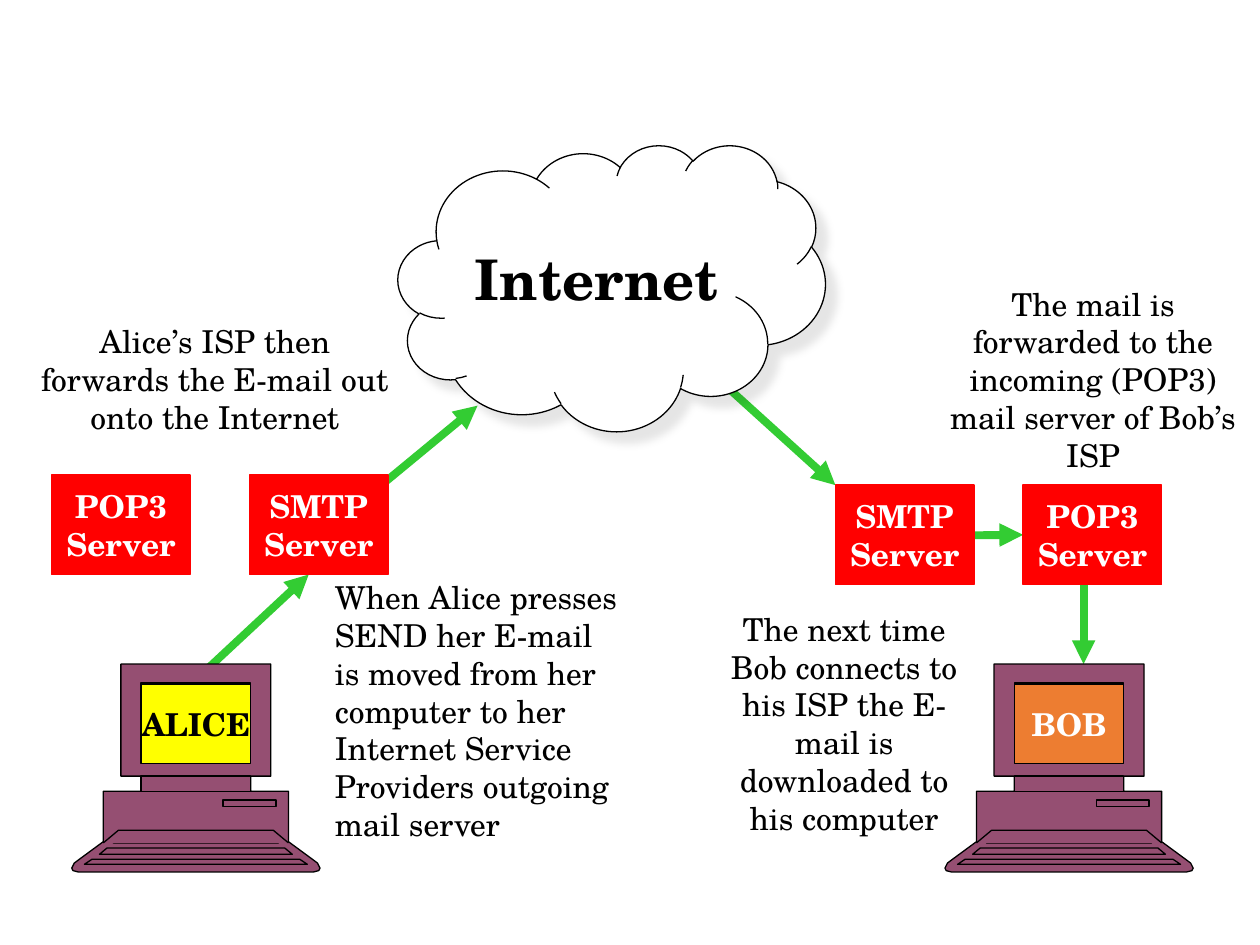
from copy import deepcopy

from lxml.etree import SubElement
from pptx import Presentation
from pptx.dml.color import RGBColor
from pptx.enum.shapes import MSO_CONNECTOR, MSO_SHAPE
from pptx.enum.text import MSO_ANCHOR, MSO_AUTO_SIZE, PP_ALIGN
from pptx.oxml.ns import qn
from pptx.util import Inches, Pt

FONT = "TeX Gyre Schola"
BLACK, WHITE, RED = "000000", "FFFFFF", "FF0000"
GREEN, PURPLE, YELLOW, ORANGE = "33CC33", "954F72", "FFFF00", "ED7D31"

COMPUTER_WIDTH = 1.97
LEFT_OUTLINE = [(0.39, 0), (0.39, 0.89), (0.55, 0.89), (0.55, 1.01), (0.25, 1.01),
                (0.25, 1.41), (0.06, 1.55), (0.02, 1.58), (0, 1.62), (0.01, 1.64),
                (0.05, 1.65)]
KEY_ROWS = [[(0.4, 1.37), (0.33, 1.42)], [(0.28, 1.46), (0.22, 1.51)],
            [(0.16, 1.55), (0.1, 1.59)]]
KEYBOARD_EDGE = [(0.37, 1.32), (0.25, 1.42)]
SCREEN = [(0.55, 0.15), (0.55, 0.75)]
NECK = [(0.55, 0.89), (0.55, 1.01)]
DRIVE_SLOT = [(1.2, 1.08), (1.2, 1.13), (1.62, 1.13), (1.62, 1.08)]


def color(value):
    return RGBColor.from_string(value)


def paint(shape, fill, line):
    shape.shadow.inherit = False
    shape.fill.solid()
    shape.fill.fore_color.rgb = color(fill)
    shape.line.color.rgb = color(line)
    shape.line.width = Pt(0.75)


def write(shape, lines, text_color=BLACK, size=18, bold=False, align=PP_ALIGN.CENTER):
    frame = shape.text_frame
    for index, line in enumerate(lines):
        para = frame.add_paragraph() if index else frame.paragraphs[0]
        para.text = line
        para.alignment = align
        para.font.name = FONT
        para.font.size = Pt(size)
        para.font.bold = bold
        para.font.color.rgb = color(text_color)
    return frame


def add_box(page, place, lines, fill, line, text_color):
    box = page.shapes.add_shape(MSO_SHAPE.RECTANGLE, *map(Inches, place))
    paint(box, fill, line)
    frame = write(box, lines, text_color, bold=True)
    frame.word_wrap = False
    frame.vertical_anchor = MSO_ANCHOR.MIDDLE
    return box


def add_server(page, left, top, protocol):
    return add_box(page, (left, top, 1.1, 0.79), [protocol, "Server"], RED, RED, WHITE)


def add_note(page, place, text, align=PP_ALIGN.CENTER):
    note = page.shapes.add_textbox(*map(Inches, place))
    frame = write(note, [text], align=align)
    frame.word_wrap = True
    frame.auto_size = MSO_AUTO_SIZE.SHAPE_TO_FIT_TEXT


def add_arrow(page, start, end):
    arrow = page.shapes.add_connector(MSO_CONNECTOR.STRAIGHT, *map(Inches, start + end))
    arrow.line.color.rgb = color(GREEN)
    arrow.line.width = Pt(4.5)
    SubElement(arrow.line._get_or_add_ln(), qn("a:tailEnd"), type="triangle")
    SubElement(arrow._element.spPr, qn("a:effectLst"))
    return arrow


def add_cloud(page, place, text):
    cloud = page.shapes.add_shape(MSO_SHAPE.CLOUD, *map(Inches, place))
    paint(cloud, WHITE, BLACK)
    effects = cloud._element.spPr.find(qn("a:effectLst"))
    shadow = SubElement(effects, qn("a:outerShdw"), blurRad=str(Pt(5)), dist=str(Pt(8.5)),
                        dir="2700000", algn="ctr", rotWithShape="0")
    tint = SubElement(shadow, qn("a:srgbClr"), val=BLACK)
    SubElement(tint, qn("a:alpha"), val="10000")
    frame = write(cloud, [text], size=32, bold=True)
    frame.vertical_anchor = MSO_ANCHOR.TOP
    frame.margin_top = Inches(0.45)


def mirrored(points):
    return points + [(COMPUTER_WIDTH - x, y) for x, y in reversed(points)]


def split_paths(shape):
    path = shape._element.spPr.find(".//" + qn("a:path"))
    segments = list(path)
    for segment in segments:
        path.remove(segment)
    blank, path_list = deepcopy(path), path.getparent()
    path_list.remove(path)
    for segment in segments:
        if segment.tag == qn("a:moveTo"):
            current = deepcopy(blank)
            path_list.append(current)
        current.append(segment)


def add_computer(page, left, top, name, screen_fill, text_color):
    halves = [LEFT_OUTLINE, *KEY_ROWS, SCREEN, NECK]
    contours = [(mirrored(half), True) for half in halves]
    contours += [(mirrored(KEYBOARD_EDGE[::-1]), False), (DRIVE_SLOT, True)]
    builder = None
    for points, closed in contours:
        spots = [(Inches(left + x), Inches(top + y)) for x, y in points]
        if builder is None:
            builder = page.shapes.build_freeform(*spots[0])
        else:
            builder.move_to(*spots[0])
        builder.add_line_segments(spots[1:], close=closed)
    computer = builder.convert_to_shape()
    paint(computer, PURPLE, BLACK)
    split_paths(computer)
    add_box(page, (left + 0.55, top + 0.16, 0.87, 0.63), [name], screen_fill, BLACK, text_color)


def main():
    deck = Presentation()
    deck.slide_width, deck.slide_height = Inches(10), Inches(7.5)
    page = deck.slides.add_slide(deck.slide_layouts[6])

    delivery = add_arrow(page, (7.5, 4.25), (8.12, 4.25))
    add_arrow(page, (1.43, 5.51), (2.45, 4.56))
    add_arrow(page, (2.93, 3.93), (3.79, 3.22))
    add_arrow(page, (5.68, 2.99), (6.63, 3.85))
    add_arrow(page, (8.6, 4.56), (8.6, 5.27))

    add_cloud(page, (3.16, 1.15, 3.39, 2.27), "Internet")
    add_server(page, 0.41, 3.77, "POP3")
    add_server(page, 1.98, 3.77, "SMTP")
    add_server(page, 6.63, 3.85, "SMTP")
    incoming = add_server(page, 8.12, 3.85, "POP3")
    delivery.end_connect(incoming, 1)

    add_computer(page, 0.57, 5.27, "ALICE", YELLOW, BLACK)
    add_computer(page, 7.5, 5.27, "BOB", ORANGE, WHITE)

    add_note(page, (2.56, 4.54, 2.5, 2.22),
             "When Alice presses SEND her E-mail is moved from her computer to her "
             "Internet Service Providers outgoing mail server", PP_ALIGN.LEFT)
    add_note(page, (0.17, 2.51, 3.07, 1.01),
             "Alice’s ISP then forwards the E-mail out onto the Internet")
    add_note(page, (7.43, 2.21, 2.49, 1.62),
             "The mail is forwarded to the incoming (POP3) mail server of Bob’s ISP")
    add_note(page, (5.68, 4.79, 2.04, 1.92),
             "The next time Bob connects to his ISP the E-mail is downloaded to his computer")
    deck.save("out.pptx")


if __name__ == "__main__":
    main()
